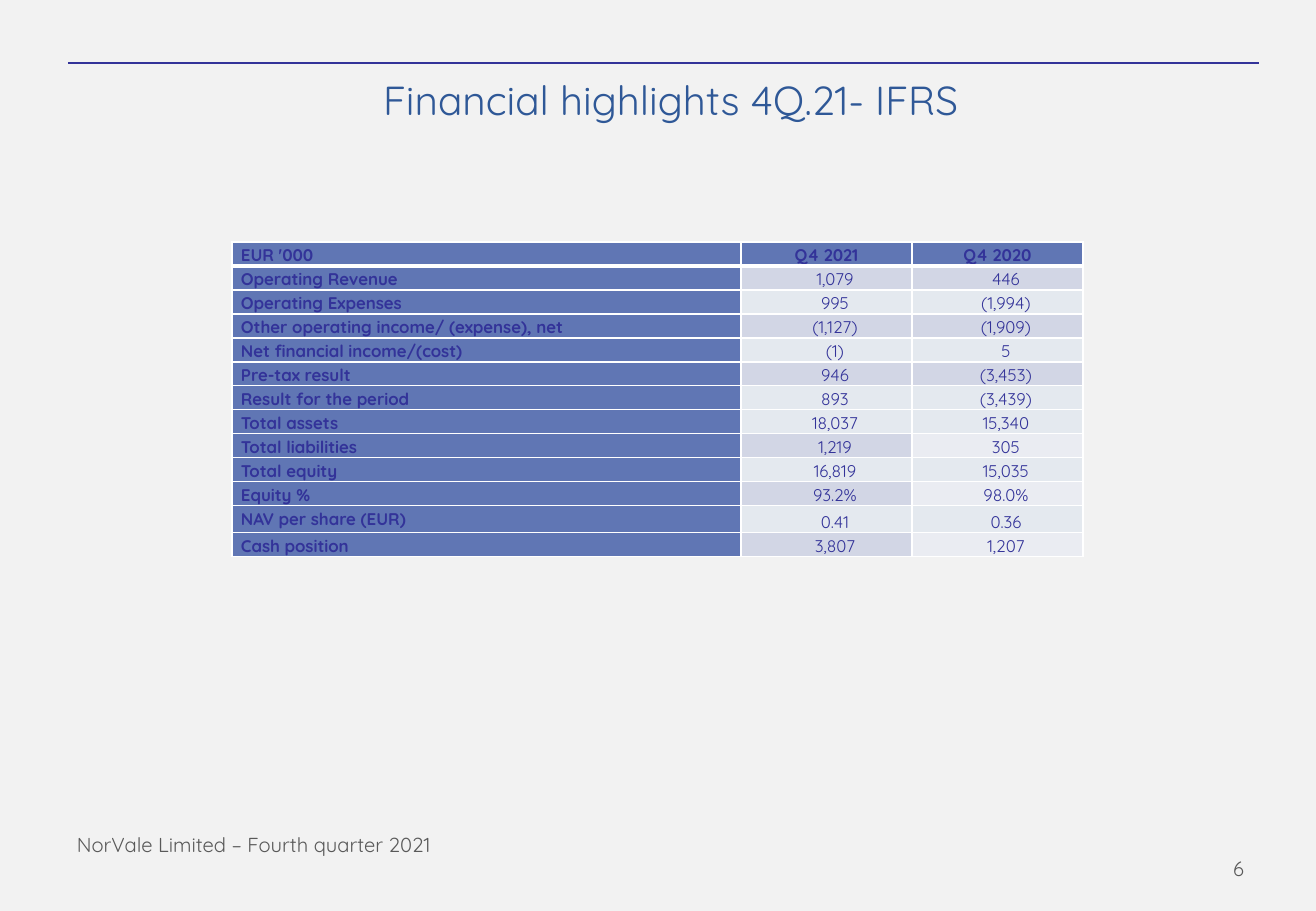
"""Build the quarterly financial highlights slide."""
from lxml.etree import SubElement
from pptx import Presentation
from pptx.dml.color import RGBColor
from pptx.enum.shapes import MSO_CONNECTOR
from pptx.enum.text import MSO_ANCHOR, PP_ALIGN
from pptx.oxml.ns import qn
from pptx.util import Pt

PX = 914400 / 121.5
COLORS = {
    "page": "F2F2F2", "title": "2F5897", "ink": "333399", "grey": "595959",
    "label": "6076B4", "dark": "D2D6E5", "light": "E4E9EF", "pale": "EAECF2",
    "border": "FFFFFF",
}


def px(*lengths):
    return [round(length * PX) for length in lengths]


def write(frame, text, size=12, color="grey", bold=False, align=PP_ALIGN.LEFT,
          anchor=MSO_ANCHOR.TOP, spacing=None, indent=0):
    frame.word_wrap = True
    frame.vertical_anchor = anchor
    paragraph = frame.paragraphs[0]
    paragraph.text = text
    paragraph.alignment = align
    paragraph.line_spacing = spacing
    if indent:
        paragraph._p.get_or_add_pPr().set("indent", str(px(indent)[0]))
    font = paragraph.runs[0].font
    font.name, font.size, font.bold = "Quicksand", Pt(size), bold
    font.color.rgb = RGBColor.from_string(COLORS[color])


deck = Presentation()
deck.slide_width, deck.slide_height = px(1316, 911)
slide = deck.slides.add_slide(deck.slide_layouts[5])
slide.background.fill.solid()
slide.background.fill.fore_color.rgb = RGBColor.from_string(COLORS["page"])

title = slide.shapes.title
title.left, title.top, title.width, title.height = px(78, 23, 1185, 152)
write(title.text_frame, "Financial highlights 4Q.21- IFRS", size=24, color="title",
      align=PP_ALIGN.CENTER, anchor=MSO_ANCHOR.MIDDLE)

rule = slide.shapes.add_connector(MSO_CONNECTOR.STRAIGHT, *px(68, 63, 1259, 63))
rule.line.color.rgb = RGBColor.from_string(COLORS["ink"])
rule.line.width = Pt(1.75)
SubElement(rule._element.spPr, qn("a:effectLst"))

footer = slide.shapes.add_textbox(*px(65, 826, 426, 49))
write(footer.text_frame, "NorVale Limited – Fourth quarter 2021")

page_number = slide.shapes.add_textbox(*px(1229, 844, 82, 49))
page_number.text_frame.margin_left = px(4)[0]
write(page_number.text_frame, "6", anchor=MSO_ANCHOR.MIDDLE)

highlights = [
    ("EUR '000", "Q4 2021", "Q4 2020", "label", "label"),
    ("Operating Revenue", "1,079", "446", "dark", "dark"),
    ("Operating Expenses", "995", "(1,994)", "light", "light"),
    ("Other operating income/ (expense), net", "(1,127)", "(1,909)", "dark", "dark"),
    ("Net financial income/(cost)", "(1)", "5", "light", "light"),
    ("Pre-tax result", "946", "(3,453)", "dark", "dark"),
    ("Result for the period", "893", "(3,439)", "light", "light"),
    ("Total assets", "18,037", "15,340", "light", "light"),
    ("Total liabilities", "1,219", "305", "dark", "pale"),
    ("Total equity", "16,819", "15,035", "light", "light"),
    ("Equity %", "93.2%", "98.0%", "dark", "pale"),
    ("NAV per share (EUR)", "0.41", "0.36", "light", "light"),
    ("Cash position", "3,807", "1,207", "dark", "pale"),
]
results = slide.shapes.add_table(len(highlights), 3, *px(232, 242, 851, 315)).table
for column, width in zip(results.columns, px(509, 171, 171)):
    column.width = width

for row, (label, current, previous, *shades) in enumerate(highlights):
    results.rows[row].height = px(27 if label.startswith("NAV") else 24)[0]
    for col, (text, shade) in enumerate(zip((label, current, previous), ["label", *shades])):
        cell = results.cell(row, col)
        cell.margin_left = cell.margin_right = px(9)[0]
        cell.margin_top = cell.margin_bottom = 0
        write(cell.text_frame, text, size=10, color="ink", bold=row == 0 or col == 0,
              align=PP_ALIGN.CENTER if col else PP_ALIGN.LEFT, spacing=1.15,
              indent=0 if col == 0 else 17 if row else -1)
        cell.vertical_anchor = MSO_ANCHOR.BOTTOM if col else MSO_ANCHOR.TOP
        for side in ("L", "R", "T", "B"):
            thick = (row, side) in ((0, "B"), (1, "T"))
            border = SubElement(cell._tc.get_or_add_tcPr(), qn(f"a:ln{side}"),
                                w=str(Pt(3 if thick else 1)))
            paint = SubElement(border, qn("a:solidFill"))
            SubElement(paint, qn("a:srgbClr"), val=COLORS["border"])
        cell.fill.solid()
        cell.fill.fore_color.rgb = RGBColor.from_string(COLORS[shade])

deck.save("out.pptx")
